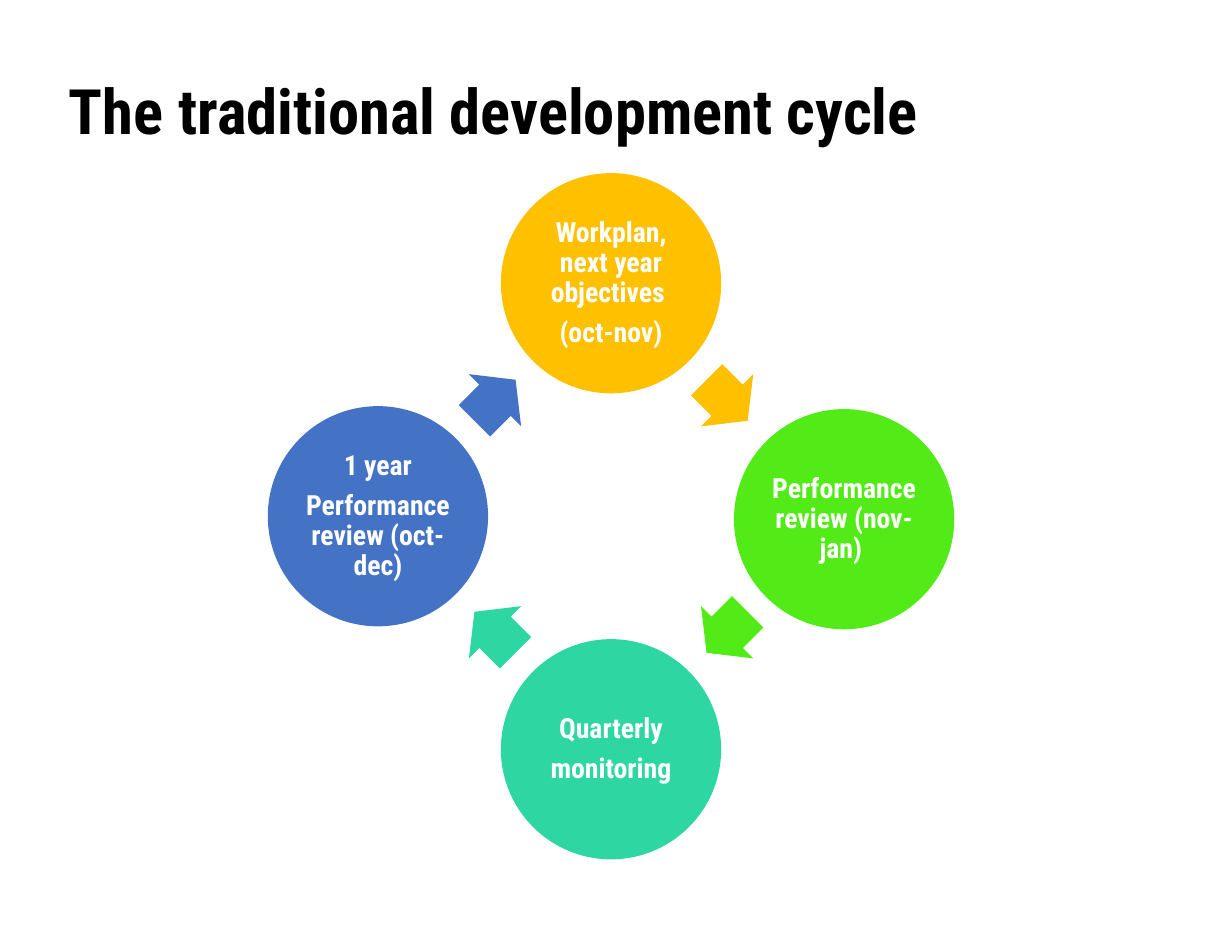
from math import cos, radians, sin

from pptx import Presentation
from pptx.dml.color import RGBColor
from pptx.enum.shapes import MSO_SHAPE
from pptx.enum.text import MSO_ANCHOR, MSO_AUTO_SIZE, PP_ALIGN
from pptx.util import Cm, Pt

OVAL, ARROW = MSO_SHAPE.OVAL, MSO_SHAPE.RIGHT_ARROW
TOP, MIDDLE = MSO_ANCHOR.TOP, MSO_ANCHOR.MIDDLE
LEFT, CENTER = PP_ALIGN.LEFT, PP_ALIGN.CENTER

# Content: colour, lines, small drop of the circle (cm), clockwise from the top
TITLE = "The traditional development cycle"
STEPS = [
    ("gold", ["Workplan, next year objectives ", "(oct-nov)"], 0),
    ("green", ["Performance review (nov-jan) "], 0.06),
    ("teal", ["Quarterly", "monitoring"], 0),
    ("blue", ["1 year", "Performance review (oct-dec)"], 0),
]
COLORS = {
    "gold": "FFC000", "green": "53EB17", "teal": "2ED7A1",
    "blue": "4472C4", "white": "FFFFFF", "black": "000000",
}

# Layout in cm
MID_X, MID_Y = 12.4, 10.48
RING, DISC = 4.73, 4.47
ARROW_RING, ARROW_W, ARROW_H = 3.33, 1.18, 1.5

# Formats
FONT = {"name": "Roboto Condensed", "bold": True}
TITLE_FONT = FONT | {"size": Pt(36)}
STEP_FONT = FONT | {"size": Pt(16)}
TITLE_PARA = {"alignment": LEFT, "line_spacing": 0.88}
STEP_PARA = {"alignment": CENTER, "line_spacing": 0.9, "space_after": Pt(5.6)}
TITLE_FRAME = {
    "word_wrap": True, "auto_size": MSO_AUTO_SIZE.NONE, "vertical_anchor": TOP,
    "margin_left": 0, "margin_top": Cm(0.15),
    "margin_right": 0, "margin_bottom": 0,
}
STEP_FRAME = {"word_wrap": True, "vertical_anchor": MIDDLE} | {
    f"margin_{side}": Cm(0.05) for side in ("left", "top", "right", "bottom")
}


def apply(item, form):
    for key, value in form.items():
        setattr(item, key, value)


def write(frame, lines, box, para, font, color):
    apply(frame, box)
    for i, line in enumerate(lines):
        part = frame.add_paragraph() if i else frame.paragraphs[0]
        apply(part, para)
        run = part.add_run()
        run.text = line
        apply(run.font, font)
        run.font.color.rgb = RGBColor.from_string(COLORS[color])


def place(slide, kind, angle, ring, width, height, color, drop=0):
    x = MID_X + ring * cos(radians(angle)) - width / 2
    y = MID_Y + ring * sin(radians(angle)) - height / 2 + drop
    shape = slide.shapes.add_shape(kind, Cm(x), Cm(y), Cm(width), Cm(height))
    shape.shadow.inherit = False
    shape.fill.solid()
    shape.fill.fore_color.rgb = RGBColor.from_string(COLORS[color])
    shape.line.fill.background()
    return shape


def main():
    deck = Presentation()
    deck.slide_width, deck.slide_height = Cm(25), Cm(19)
    slide = deck.slides.add_slide(deck.slide_layouts[5])

    # Title
    title = slide.shapes.title
    apply(title, {"left": Cm(1.4), "top": Cm(1.5),
                  "width": Cm(22), "height": Cm(3)})
    write(title.text_frame, [TITLE], TITLE_FRAME, TITLE_PARA,
          TITLE_FONT, "black")

    # Cycle: each circle is followed by an arrow an eighth of a turn on
    for i, (color, lines, drop) in enumerate(STEPS):
        angle = 90 * i - 90
        disc = place(slide, OVAL, angle, RING, DISC, DISC, color, drop)
        write(disc.text_frame, lines, STEP_FRAME, STEP_PARA,
              STEP_FONT, "white")
        arrow = place(slide, ARROW, angle + 45, ARROW_RING,
                      ARROW_W, ARROW_H, color)
        arrow.rotation = angle + 135
        arrow.adjustments[0], arrow.adjustments[1] = 0.6, 0.5

    deck.save("out.pptx")


if __name__ == "__main__":
    main()
